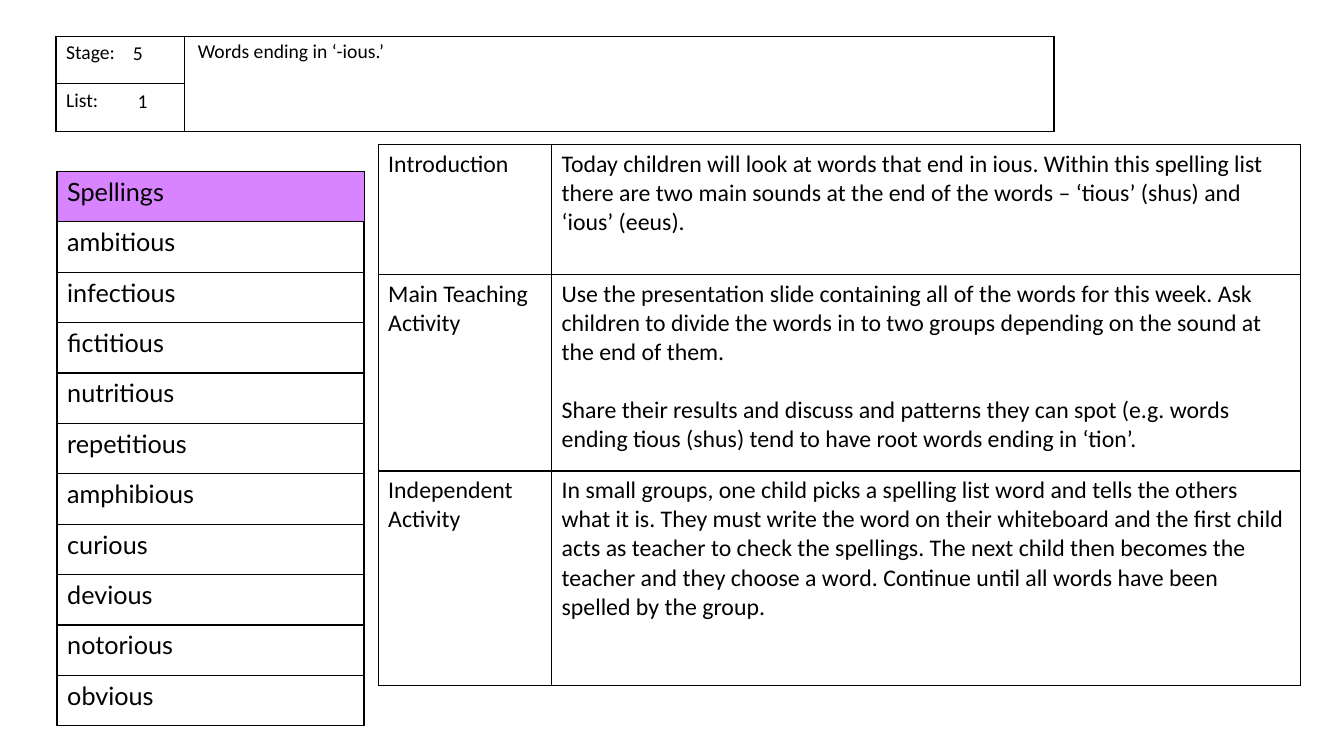
import pptx
import pptx.util
import pptx.dml.color
import pptx.enum.text
import pptx.oxml.ns
from dataclasses import dataclass
from lxml import etree

Cm, Pt = pptx.util.Cm, pptx.util.Pt
RGB = pptx.dml.color.RGBColor.from_string


@dataclass(frozen=True)
class Theme:
    ink: str = "000000"
    head: str = "D883FF"
    body: str = "Calibri"
    list: str = "Lato"
    small: int = 14
    text: int = 17
    word: int = 18
    gap: float = 20.7
    edge: int = 1


theme = Theme()

HEAD = "Spellings"
WORDS = ["ambitious", "infectious", "fictitious", "nutritious",
         "repetitious", "amphibious", "curious", "devious", "notorious",
         "obvious"]

PLAN = [
    ["Introduction",
     "Today children will look at words that end in ious. Within this "
     "spelling list there are two main sounds at the end of the words – "
     "‘tious’ (shus) and ‘ious’ (eeus)."],
    ["Main Teaching Activity",
     "Use the presentation slide containing all of the words for this week. "
     "Ask children to divide the words in to two groups depending on the "
     "sound at the end of them.\n"
     "Share their results and discuss and patterns they can spot (e.g. words "
     "ending tious (shus) tend to have root words ending in ‘tion’."],
    ["Independent Activity",
     "In small groups, one child picks a spelling list word and tells the "
     "others what it is. They must write the word on their whiteboard and "
     "the first child acts as teacher to check the spellings. The next child "
     "then becomes the teacher and they choose a word. Continue until all "
     "words have been spelled by the group."],
]


def style(frame, size, face):
    for para in frame.paragraphs:
        para.alignment = pptx.enum.text.PP_ALIGN.LEFT
        para.font.size = Pt(size)
        para.font.name = face
        para.font.color.rgb = RGB(theme.ink)


def border(cell):
    props = cell._tc.get_or_add_tcPr()
    qn = pptx.oxml.ns.qn
    for side in ("lnL", "lnR", "lnT", "lnB"):
        line = etree.SubElement(props, qn("a:" + side), w=str(Pt(theme.edge)))
        fill = etree.SubElement(line, qn("a:solidFill"))
        etree.SubElement(fill, qn("a:srgbClr"), val=theme.ink)


def grid(slide, left, top, cols, rows, texts, size, face):
    frame = slide.shapes.add_table(len(rows), len(cols), Cm(left), Cm(top),
                                   Cm(sum(cols)), Cm(sum(rows)))
    table = frame.table
    table.first_row = table.horz_banding = False
    for col, width in zip(table.columns, cols):
        col.width = Cm(width)
    for row, height, line in zip(table.rows, rows, texts):
        row.height = Cm(height)
        for cell, text in zip(row.cells, line):
            cell.text = text
            style(cell.text_frame, size, face)
            for para in cell.text_frame.paragraphs[1:]:
                para.space_before = Pt(theme.gap)
            border(cell)
            cell.fill.background()
    return table


def listing(slide, left, words):
    table = grid(slide, left, 4.32, [7.75], [1.27] * (len(words) + 1),
                 [[word] for word in [HEAD, *words]], theme.word, theme.list)
    fill = table.cell(0, 0).fill
    fill.solid()
    fill.fore_color.rgb = RGB(theme.head)


def label(shape, text, left, top, width, height):
    shape.left, shape.top = Cm(left), Cm(top)
    shape.width, shape.height = Cm(width), Cm(height)
    frame = shape.text_frame
    frame.text = text
    frame.word_wrap = True
    frame.auto_size = pptx.enum.text.MSO_AUTO_SIZE.NONE
    frame.vertical_anchor = pptx.enum.text.MSO_ANCHOR.TOP
    style(frame, theme.small, theme.body)
    frame.paragraphs[0].line_spacing = 0.9


def main():
    deck = pptx.Presentation()
    deck.slide_width, deck.slide_height = Cm(33.87), Cm(19.05)
    slide = deck.slides.add_slide(deck.slide_layouts[5])

    # Header: stage and list numbers beside the title
    head = grid(slide, 1.41, 0.91, [3.23, 21.92], [1.2, 1.2],
                [["Stage:", ""], ["List:", ""]], theme.small, theme.body)
    head.cell(0, 1).merge(head.cell(1, 1))
    label(slide.shapes.title, "Words ending in ‘-ious.’",
          4.73, 0.91, 21.84, 2.41)

    # Blank list grid, whose edges thicken the list's lines
    listing(slide, 1.42, [""] * len(WORDS))

    # Stage and list values
    for text, left, top in [("5", 3.1, 0.97), ("1", 3.22, 2.18)]:
        box = slide.shapes.add_textbox(0, 0, 0, 0)
        label(box, text, left, top, 1.19, 1.02)

    # Lesson plan
    grid(slide, 9.53, 3.64, [4.37, 18.87], [3.28, 4.95, 5.41],
         PLAN, theme.text, theme.body)

    # Spelling list
    listing(slide, 1.44, WORDS)

    deck.save("out.pptx")


if __name__ == "__main__":
    main()
